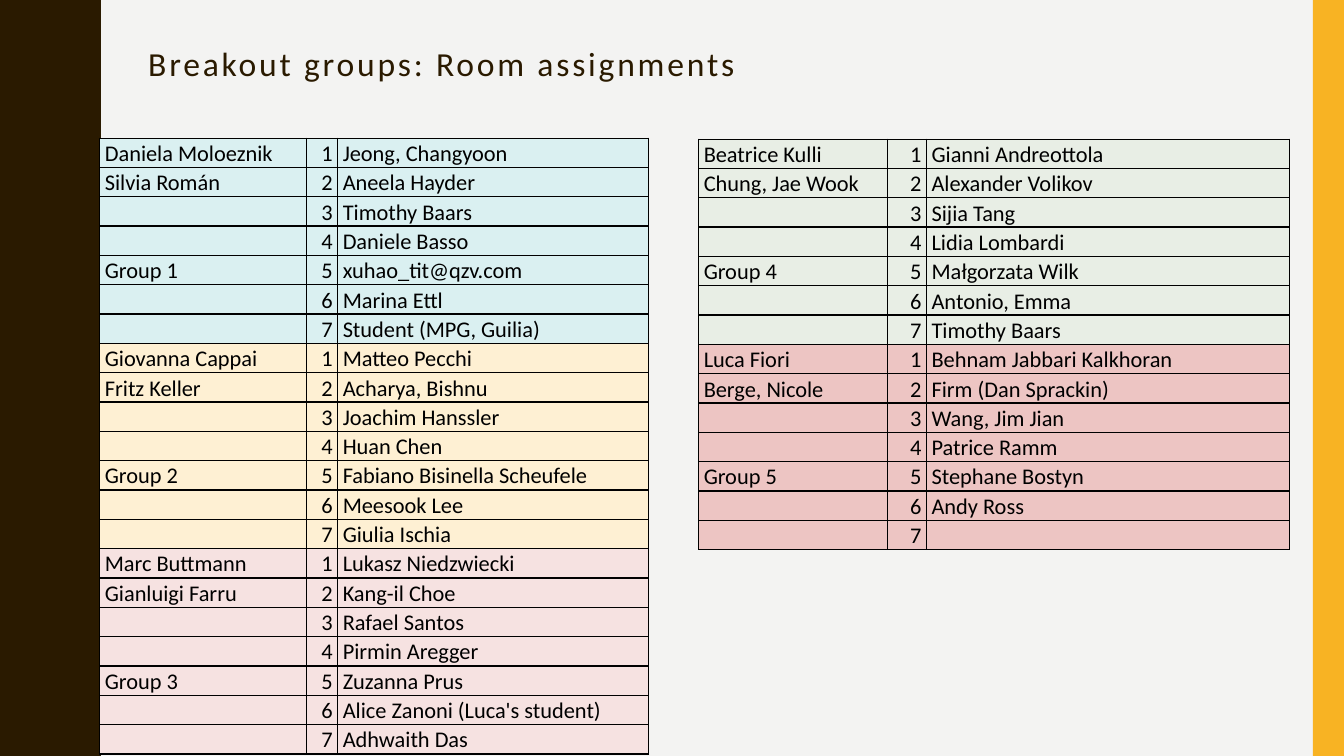
from lxml.etree import SubElement
from pptx import Presentation
from pptx.dml.color import RGBColor
from pptx.enum.shapes import MSO_SHAPE
from pptx.enum.text import MSO_ANCHOR, PP_ALIGN
from pptx.oxml.ns import qn
from pptx.util import Inches, Pt


def color(value):
    return RGBColor.from_string(value)


def paint(shape, value):
    shape.fill.solid()
    shape.fill.fore_color.rgb = color(value)
    shape.line.fill.background()
    shape.shadow.inherit = False


presentation = Presentation()
presentation.slide_width = Inches(13.33)
presentation.slide_height = Inches(7.5)
slide = presentation.slides.add_slide(presentation.slide_layouts[5])
slide.background.fill.solid()
slide.background.fill.fore_color.rgb = color("F3F3F2")

half_wave = [
    (0.78, 0), (0.78, 0.07), (0.79, 0.14), (0.8, 0.2), (0.81, 0.25),
    (0.83, 0.29), (0.85, 0.33), (0.87, 0.38), (0.89, 0.42), (0.91, 0.46),
    (0.93, 0.5), (0.95, 0.55), (0.96, 0.61), (0.97, 0.68), (0.97, 0.75),
]
wave_points = []
for crest in range(5):
    top = crest * 1.5
    wave_points += [(x, top + y) for x, y in half_wave]
    wave_points += [(x, top + 1.5 - y) for x, y in reversed(half_wave[:-1])]
builder = slide.shapes.build_freeform(0, 0, scale=Inches(1))
builder.add_line_segments(wave_points + [(0, 7.5)], close=True)
paint(builder.convert_to_shape(), "2A1A00")

right_band = slide.shapes.add_shape(
    MSO_SHAPE.RECTANGLE, Inches(13.02), 0, Inches(0.31), Inches(7.5))
paint(right_band, "F8B323")

title = slide.shapes.title
title.left, title.top = Inches(1.37), Inches(0.42)
title.width, title.height = Inches(11.13), Inches(0.96)
title.text_frame.text = "Breakout groups: Room assignments"
title.text_frame.vertical_anchor = MSO_ANCHOR.TOP
paragraph = title.text_frame.paragraphs[0]
paragraph.alignment = PP_ALIGN.LEFT
paragraph.line_spacing = 0.9
paragraph.font.name = "Calibri"
paragraph.font.size = Pt(24)
paragraph.font.color.rgb = color("2A1A00")
paragraph.runs[0].font._element.set("spc", "200")

left_groups = [
    ("Group 1", "DAF0F1", ["Daniela Moloeznik", "Silvia Román"],
     ["Jeong, Changyoon", "Aneela Hayder", "Timothy Baars", "Daniele Basso",
      "xuhao_tit@qzv.com", "Marina Ettl", "Student (MPG, Guilia)"]),
    ("Group 2", "FEF0D3", ["Giovanna Cappai", "Fritz Keller"],
     ["Matteo Pecchi", "Acharya, Bishnu", "Joachim Hanssler", "Huan Chen",
      "Fabiano Bisinella Scheufele", "Meesook Lee", "Giulia Ischia"]),
    ("Group 3", "F6E2E1", ["Marc Buttmann", "Gianluigi Farru"],
     ["Lukasz Niedzwiecki", "Kang-il Choe", "Rafael Santos", "Pirmin Aregger",
      "Zuzanna Prus", "Alice Zanoni (Luca's student)", "Adhwaith Das"]),
]
right_groups = [
    ("Group 4", "E8EEE5", ["Beatrice Kulli", "Chung, Jae Wook"],
     ["Gianni Andreottola", "Alexander Volikov", "Sijia Tang", "Lidia Lombardi",
      "Małgorzata Wilk", "Antonio, Emma", "Timothy Baars"]),
    ("Group 5", "EDC5C3", ["Luca Fiori", "Berge, Nicole"],
     ["Behnam Jabbari Kalkhoran", "Firm (Dan Sprackin)", "Wang, Jim Jian",
      "Patrice Ramm", "Stephane Bostyn", "Andy Ross", ""]),
]
tables = [
    (0.99, 1.37, [2.05, 0.31, 3.08], left_groups),
    (6.93, 1.38, [1.87, 0.39, 3.6], right_groups),
]

for left, top, widths, groups in tables:
    rows = []
    for group, fill, leaders, members in groups:
        labels = leaders + ["", "", group, "", ""]
        for number, (label, member) in enumerate(zip(labels, members), 1):
            rows.append((fill, [label, str(number), member]))
    table = slide.shapes.add_table(
        len(rows), 3, Inches(left), Inches(top),
        Inches(sum(widths)), Inches(0.29 * len(rows))).table
    table.first_row = False
    table.horz_banding = False
    for column, width in zip(table.columns, widths):
        column.width = Inches(width)
    for row_index, (fill, texts) in enumerate(rows):
        table.rows[row_index].height = Inches(0.29)
        for column_index, text in enumerate(texts):
            cell = table.cell(row_index, column_index)
            cell.margin_left = cell.margin_right = Inches(0.05)
            cell.margin_top = cell.margin_bottom = 0
            cell.vertical_anchor = MSO_ANCHOR.BOTTOM
            for side in ("a:lnL", "a:lnR", "a:lnT", "a:lnB"):
                border = SubElement(cell._tc.tcPr, qn(side), w="12700")
                border_fill = SubElement(border, qn("a:solidFill"))
                SubElement(border_fill, qn("a:srgbClr"), val="000000")
            cell.fill.solid()
            cell.fill.fore_color.rgb = color(fill)
            cell.text = text
            paragraph = cell.text_frame.paragraphs[0]
            paragraph.alignment = PP_ALIGN.RIGHT if column_index == 1 else PP_ALIGN.LEFT
            paragraph.line_spacing = 1.07
            paragraph.font.name = "Calibri"
            paragraph.font.size = Pt(16)
            paragraph.font.color.rgb = color("000000")
            if not text:
                SubElement(paragraph._p, qn("a:endParaRPr"), sz="1600")

presentation.save("out.pptx")
